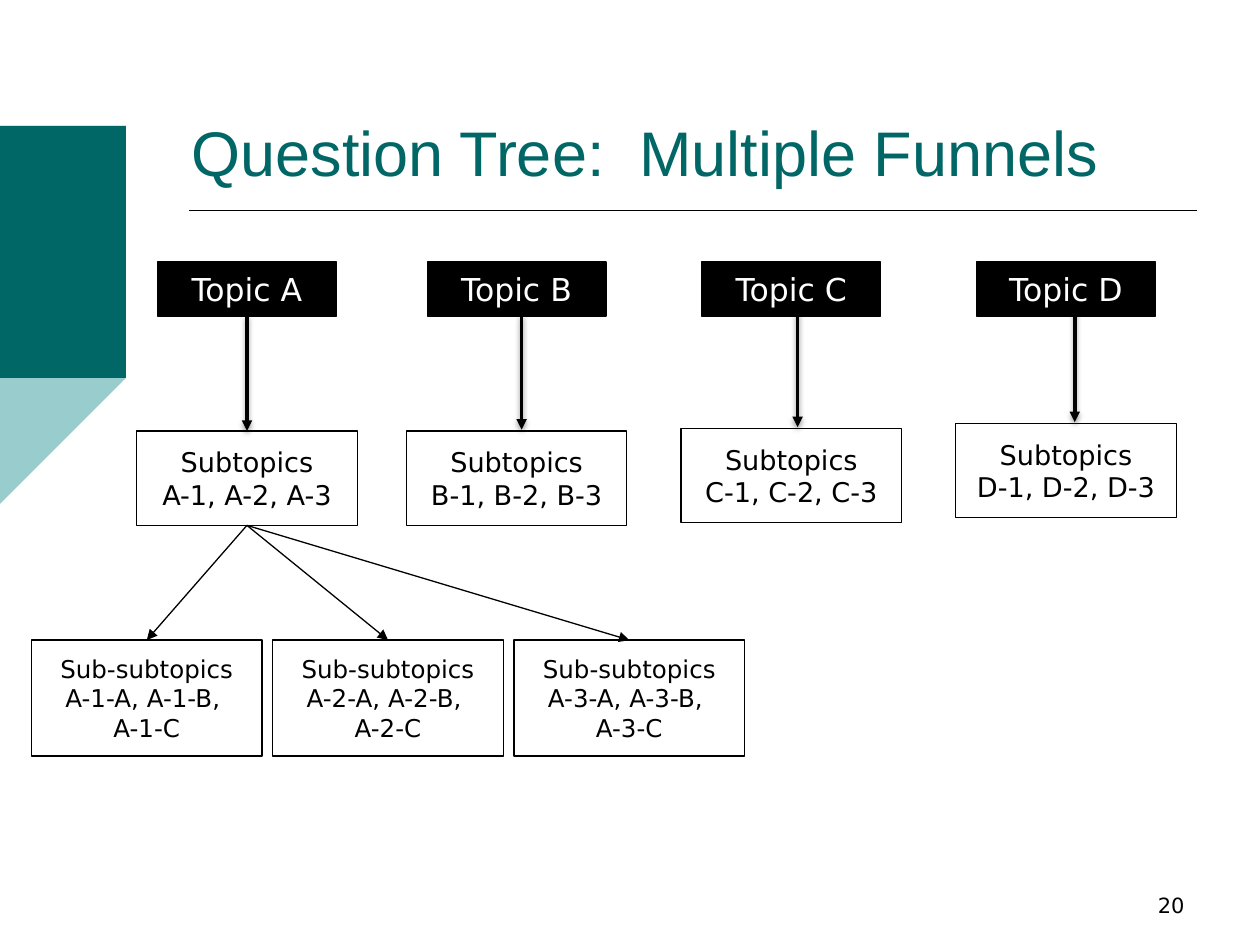
import copy

import pptx
import pptx.dml.color
import pptx.enum.shapes
import pptx.enum.text
import pptx.oxml
import pptx.oxml.ns
import pptx.util

Inches = pptx.util.Inches
Pt = pptx.util.Pt
qn = pptx.oxml.ns.qn
ALIGN = pptx.enum.text.PP_ALIGN
ANCHOR = pptx.enum.text.MSO_ANCHOR

COLORS = {"teal": "006666", "pale": "99CCCC", "black": "000000", "white": "FFFFFF"}
BODY_FONT, TITLE_FONT = "DejaVu Sans", "Arial"

# Grid: left edge of each topic, top of its subtopics, shift of its arrow
TOPIC_COLUMNS = {
    "A": (1.25, 3.42, 0),
    "B": (3.39, 3.42, 0.04),
    "C": (5.57, 3.4, 0.05),
    "D": (7.75, 3.36, 0.07),
}
TOPIC_TOP, TOPIC_WIDTH, TOPIC_HEIGHT = 2.08, 1.42, 0.43
SUBTOPIC_WIDTH, SUBTOPIC_HEIGHT = 1.75, 0.75
DETAIL_LEFT, DETAIL_STEP, DETAIL_TOP = 0.25, 1.915, 5.08
DETAIL_WIDTH, DETAIL_HEIGHT = 1.83, 0.92
ARROW_LENGTH = 0.91


def rgb(name):
    return pptx.dml.color.RGBColor.from_string(COLORS[name])


def write_text(shape, text, size, font=BODY_FONT, color="black",
               align=ALIGN.CENTER, anchor=ANCHOR.MIDDLE):
    """Write one paragraph per line; a vertical tab breaks within a paragraph."""
    frame = shape.text_frame
    frame.word_wrap = True
    frame.auto_size = pptx.enum.text.MSO_AUTO_SIZE.NONE
    frame.vertical_anchor = anchor
    frame.text = text
    for paragraph in frame.paragraphs:
        paragraph.alignment = align
        for run in paragraph.runs:
            run.font.name = font
            run.font.size = Pt(size)
            run.font.color.rgb = rgb(color)
        for line_break in paragraph._p.findall(qn("a:br")):
            line_break.append(copy.deepcopy(paragraph.runs[0]._r.rPr))


def add_box(slide, left, top, width, height, text, size, fill="white", color="black"):
    box = slide.shapes.add_shape(
        pptx.enum.shapes.MSO_SHAPE.RECTANGLE,
        Inches(left), Inches(top), Inches(width), Inches(height))
    box.shadow.inherit = False
    box.fill.solid()
    box.fill.fore_color.rgb = rgb(fill)
    box.line.color.rgb = rgb("black")
    box.line.width = Pt(0.75)
    write_text(box, text, size, color=color)
    return box


def add_line(slide, start, end, width, arrow=False, shadow=False):
    line = slide.shapes.add_connector(
        pptx.enum.shapes.MSO_CONNECTOR.STRAIGHT,
        *(Inches(value) for value in (*start, *end)))
    line.line.color.rgb = rgb("black")
    line.line.width = Pt(width)
    if arrow:
        head = line.line._get_or_add_ln().makeelement(qn("a:tailEnd"), {"type": "triangle"})
        line.line._get_or_add_ln().append(head)
    shade = (
        f'<a:outerShdw blurRad="{Pt(3.1)}" dist="{Pt(1.6)}" dir="5400000" rotWithShape="0">'
        f'<a:srgbClr val="{COLORS["black"]}"><a:alpha val="38000"/></a:srgbClr>'
        "</a:outerShdw>") if shadow else ""
    line._element.spPr.append(pptx.oxml.parse_xml(
        f'<a:effectLst {pptx.oxml.ns.nsdecls("a")}>{shade}</a:effectLst>'))
    return line


def join(line, upper, lower):
    line.begin_connect(upper, 2)
    line.end_connect(lower, 0)


def add_edge_disc(slide, top, middle, bulge, control, color, steps=30):
    """Draw the part of a disc that reaches in from the slide's left edge."""
    curve = ((0, top), control[0], control[1], (bulge, middle))
    upper = []
    for step in range(steps + 1):
        t = step / steps
        weights = ((1 - t) ** 3, 3 * t * (1 - t) ** 2, 3 * t * t * (1 - t), t ** 3)
        upper.append(tuple(sum(w * point[axis] for w, point in zip(weights, curve))
                           for axis in (0, 1)))
    lower = [(x, 2 * middle - y) for x, y in reversed(upper[:-1])]
    points = upper + lower
    builder = slide.shapes.build_freeform(*points[0], scale=Inches(1))
    builder.add_line_segments(points[1:], close=True)
    disc = builder.convert_to_shape()
    disc.shadow.inherit = False
    disc.fill.solid()
    disc.fill.fore_color.rgb = rgb(color)
    disc.line.fill.background()


def add_frame(slide):
    # Decoration at the left edge and rule under the title
    add_edge_disc(slide, 1.06, 2.46, 0.96, ((0.6, 1.38), (0.96, 1.9)), "pale")
    add_edge_disc(slide, 0.3, 1.72, 0.73, ((0.46, 0.62), (0.73, 1.16)), "teal")
    add_line(slide, (1.5, 1.67), (9.5, 1.67), 1)

    # Title and slide number
    title = slide.shapes.title
    title.left, title.top, title.width, title.height = map(Inches, (1.42, 0.58, 8, 1.25))
    write_text(title, "Question Tree:  Multiple Funnels", 36, font=TITLE_FONT,
               color="teal", align=ALIGN.LEFT)
    number = slide.shapes.add_textbox(*map(Inches, (7.17, 6.83, 2.33, 0.5)))
    write_text(number, "20", 12, align=ALIGN.RIGHT, anchor=ANCHOR.BOTTOM)


def add_funnel(slide, letter, left, subtopic_top, shift):
    """Add a topic with its subtopics below; return the subtopics box."""
    center = left + TOPIC_WIDTH / 2
    topic = add_box(slide, left, TOPIC_TOP, TOPIC_WIDTH, TOPIC_HEIGHT,
                    f"Topic {letter}", 18, fill="black", color="white")
    names = ", ".join(f"{letter}-{index}" for index in (1, 2, 3))
    subtopics = add_box(slide, center - SUBTOPIC_WIDTH / 2, subtopic_top,
                        SUBTOPIC_WIDTH, SUBTOPIC_HEIGHT, f"Subtopics\n{names}", 15.5)
    tip = subtopic_top - 0.01
    arrow = add_line(slide, (center + shift, tip - ARROW_LENGTH), (center + shift, tip),
                     2, arrow=True, shadow=True)
    if not shift:
        join(arrow, topic, subtopics)
    return subtopics


def add_details(slide, parent):
    for index in (1, 2, 3):
        name = f"A-{index}"
        box = add_box(slide, DETAIL_LEFT + (index - 1) * DETAIL_STEP, DETAIL_TOP,
                      DETAIL_WIDTH, DETAIL_HEIGHT,
                      f"Sub-subtopics\n{name}-A, {name}-B, \v{name}-C", 14)
        join(add_line(slide, (0, 0), (1, 1), 0.75, arrow=True), parent, box)


def main():
    presentation = pptx.Presentation()
    presentation.slide_width, presentation.slide_height = Inches(10), Inches(7.5)
    slide = presentation.slides.add_slide(presentation.slide_layouts[5])
    add_frame(slide)
    funnels = {letter: add_funnel(slide, letter, *column)
               for letter, column in TOPIC_COLUMNS.items()}
    add_details(slide, funnels["A"])
    presentation.save("out.pptx")


if __name__ == "__main__":
    main()
